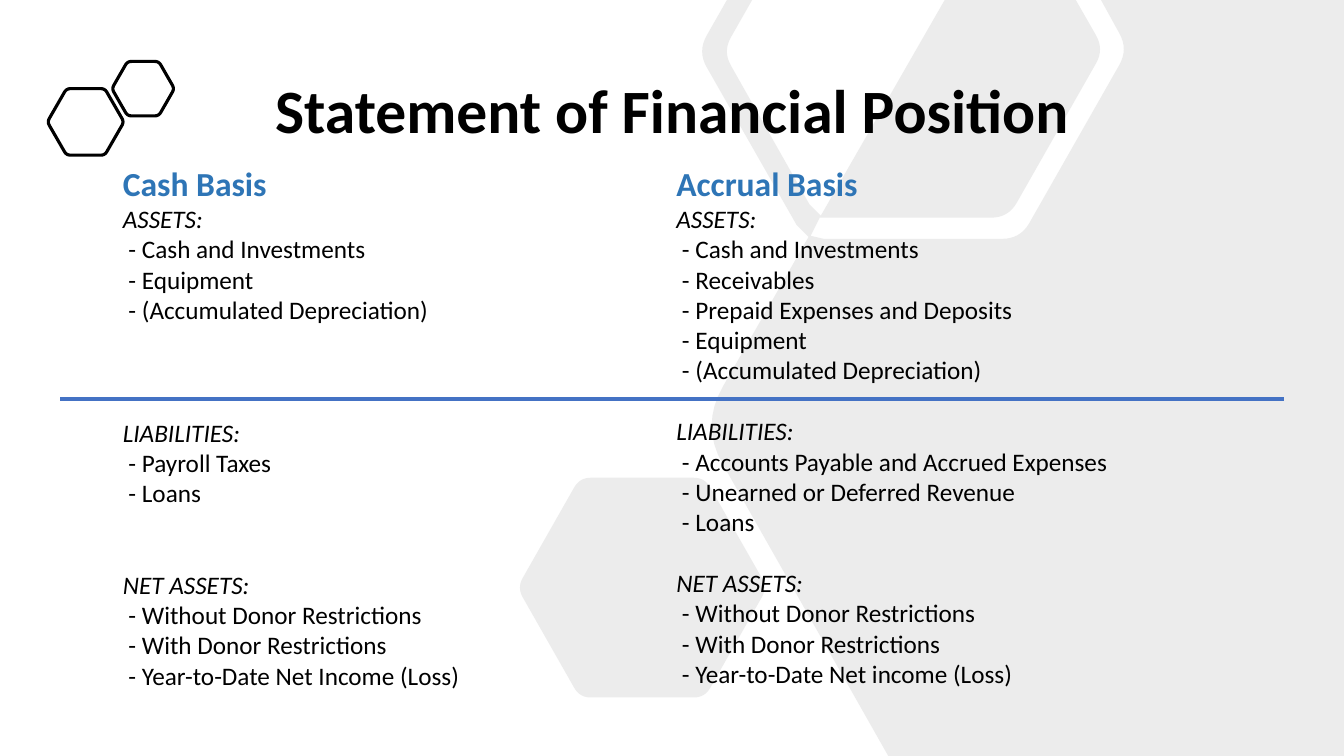
from lxml.etree import SubElement
from pptx import Presentation
from pptx.dml.color import RGBColor
from pptx.enum.shapes import MSO_CONNECTOR
from pptx.enum.text import MSO_ANCHOR, MSO_AUTO_SIZE, PP_ALIGN
from pptx.oxml.ns import qn
from pptx.util import Cm, Pt

FONT = "Calibri"
BLACK = "000000"
HEADING_BLUE = "2E75B6"
LINE_BLUE = "4472C4"
GRAY = "808080"
BODY_SIZE = 18
LINE_PITCH = 22
SECTION_LINES = {"ASSETS": 7, "LIABILITIES": 5, "NET ASSETS": 4}
NET_ASSETS = ["Without Donor Restrictions", "With Donor Restrictions"]

COLUMNS = [
    (1.12, "Cash Basis", {
        "ASSETS": ["Cash and Investments", "Equipment", "(Accumulated Depreciation)"],
        "LIABILITIES": ["Payroll Taxes", "Loans"],
        "NET ASSETS": NET_ASSETS + ["Year-to-Date Net Income (Loss)"],
    }),
    (6.61, "Accrual Basis", {
        "ASSETS": ["Cash and Investments", "Receivables", "Prepaid Expenses and Deposits",
                   "Equipment", "(Accumulated Depreciation)"],
        "LIABILITIES": ["Accounts Payable and Accrued Expenses",
                        "Unearned or Deferred Revenue", "Loans"],
        "NET ASSETS": NET_ASSETS + ["Year-to-Date Net income (Loss)"],
    }),
]

INNER_PANEL = [
    (9.37, 0, 0), (10.67, 0, 0), (10.95, 0.49, 0.16), (10, 2.16, 0.17), (8.13, 2.16, 0),
]
OUTER_PANEL = [
    (7.21, 0, 0), (7.46, 0, 0), (7.17, 0.51, 0.16), (8.03, 2.03, 0), (8.14, 2.14, 0),
    (8.04, 2.34, 0), (8.17, 2.37, 0), (10.12, 2.37, 0.18), (11.19, 0.49, 0.18),
    (10.92, 0, 0), (13.33, 0, 0), (13.33, 7.5, 0), (8.81, 7.5, 0), (6.95, 4.22, 0.44),
    (8.02, 2.35, 0), (7.9, 2.23, 0), (6.92, 0.51, 0.18),
]


def inches(value):
    return Cm(value * 2.54)


def color(value):
    return RGBColor.from_string(value)


def write(paragraph, text, size=BODY_SIZE, fill=BLACK, bold=False, italic=False,
          align=PP_ALIGN.LEFT, before=0, spacing=1.0):
    paragraph.alignment = align
    paragraph.space_before = Pt(before)
    paragraph.line_spacing = spacing
    run = paragraph.add_run()
    run.text = text
    run.font.name = FONT
    run.font.size = Pt(size)
    run.font.bold = bold
    run.font.italic = italic
    run.font.color.rgb = color(fill)


def hexagon(center_x, center_y, half_width, half_height, cut):
    offsets = [(-1, 0), (-0.5, -1), (0.5, -1), (1, 0), (0.5, 1), (-0.5, 1)]
    return [(center_x + x * half_width, center_y + y * half_height, cut) for x, y in offsets]


def toward(start, end, distance):
    length = ((end[0] - start[0]) ** 2 + (end[1] - start[1]) ** 2) ** 0.5
    return [a + (b - a) * distance / length for a, b in zip(start[:2], end[:2])]


def rounded(corners, steps=8):
    points = []
    for index, corner in enumerate(corners):
        cut = corner[2]
        if not cut:
            points.append(corner[:2])
            continue
        first = toward(corner, corners[index - 1], cut)
        last = toward(corner, corners[(index + 1) % len(corners)], cut)
        for step in range(steps + 1):
            t = step / steps
            points.append([(1 - t) ** 2 * a + 2 * t * (1 - t) * b + t ** 2 * c
                           for a, b, c in zip(first, corner, last)])
    return [(inches(x), inches(y)) for x, y in points]


class SlideBuilder:
    def __init__(self, presentation):
        self.slide = presentation.slides.add_slide(presentation.slide_layouts[5])
        self.shapes = self.slide.shapes

    def outline(self, *contours, fill=None, opacity=100, line=None, width=2.25):
        builder = None
        for contour in contours:
            points = rounded(contour)
            if builder is None:
                builder = self.shapes.build_freeform(*points[0], scale=1.0)
            else:
                builder.move_to(*points[0])
            builder.add_line_segments(points[1:], close=True)
        shape = builder.convert_to_shape()
        shape.shadow.inherit = False
        if fill:
            shape.fill.solid()
            shape.fill.fore_color.rgb = color(fill)
            solid = shape.fill.fore_color._xFill.find(qn("a:srgbClr"))
            SubElement(solid, qn("a:alpha"), val=str(opacity * 1000))
        else:
            shape.fill.background()
        if line:
            shape.line.color.rgb = color(line)
            shape.line.width = Pt(width)
        else:
            shape.line.fill.background()

    def title(self, text, left, top, width, height):
        title = self.shapes.title
        title.left, title.top = inches(left), inches(top)
        title.width, title.height = inches(width), inches(height)
        frame = title.text_frame
        frame.vertical_anchor = MSO_ANCHOR.MIDDLE
        frame.auto_size = MSO_AUTO_SIZE.NONE
        write(frame.paragraphs[0], text, size=44, bold=True, align=PP_ALIGN.CENTER, spacing=0.9)
        title.element.getparent().append(title.element)

    def column(self, left, heading, sections, top=1.57, width=5.5, height=5.4):
        box = self.shapes.add_textbox(inches(left), inches(top), inches(width), inches(height))
        frame = box.text_frame
        frame.word_wrap = True
        write(frame.paragraphs[0], heading, size=24, fill=HEADING_BLUE, bold=True)
        gap = 0
        for name, items in sections.items():
            write(frame.add_paragraph(), f"{name}:", italic=True, before=gap)
            for item in items:
                write(frame.add_paragraph(), f" - {item}")
            gap = (SECTION_LINES[name] - 1 - len(items)) * LINE_PITCH

    def rule(self, left, right, top, line, width):
        connector = self.shapes.add_connector(
            MSO_CONNECTOR.STRAIGHT, inches(left), inches(top), inches(right), inches(top))
        connector.line.color.rgb = color(line)
        connector.line.width = Pt(width)
        SubElement(connector.element.spPr, qn("a:effectLst"))


def main():
    presentation = Presentation()
    presentation.slide_width = inches(13.33)
    presentation.slide_height = inches(7.5)
    builder = SlideBuilder(presentation)
    builder.outline(hexagon(6.37, 5.83, 1.24, 1.09, 0.11), INNER_PANEL, OUTER_PANEL,
                    fill=GRAY, opacity=15)
    builder.outline(hexagon(0.85, 1.21, 0.38, 0.33, 0.04), line=BLACK)
    builder.outline(hexagon(1.42, 0.88, 0.31, 0.27, 0.04), line=BLACK)
    builder.title("Statement of Financial Position", 0.92, 0.4, 11.5, 1.45)
    for left, heading, sections in COLUMNS:
        builder.column(left, heading, sections)
    builder.rule(0.6, 12.73, 3.96, LINE_BLUE, 3)
    presentation.save("out.pptx")


if __name__ == "__main__":
    main()
